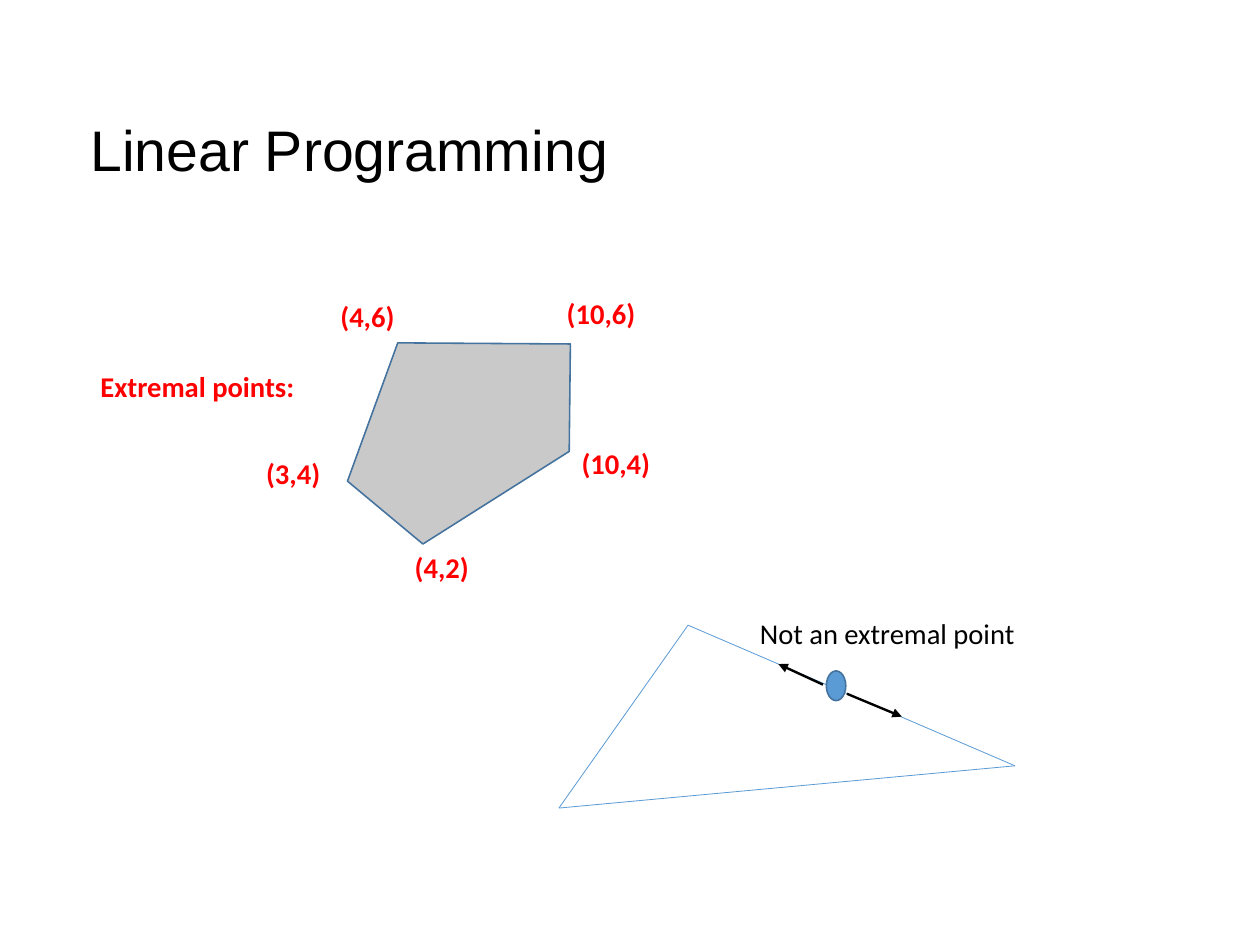
"""Build the Linear Programming slide on extremal points."""
import pptx
import pptx.dml.color
import pptx.enum.shapes
import pptx.enum.text
import pptx.oxml.ns
import pptx.util
from lxml import etree

Inches = pptx.util.Inches
Pt = pptx.util.Pt
HUES = {"ink": "000000", "red": "FF0000", "gray": "C9C9C9",
        "edge": "43739E", "blue": "5B9BD5"}


def tint(name):
    return pptx.dml.color.RGBColor.from_string(HUES[name])


def style(font, face, size, hue, bold=False):
    font.name = face
    font.size = Pt(size)
    font.bold = bold
    font.color.rgb = tint(hue)


def add_title(slide, text):
    title = slide.shapes.title
    title.left, title.top = Inches(0.79), Inches(0.74)
    title.width, title.height = Inches(9.25), Inches(1.12)
    frame = title.text_frame
    frame.text = text
    frame.margin_left = frame.margin_right = 0
    frame.margin_top = frame.margin_bottom = 0
    frame.vertical_anchor = pptx.enum.text.MSO_ANCHOR.MIDDLE
    line = frame.paragraphs[0]
    line.alignment = pptx.enum.text.PP_ALIGN.LEFT
    style(line.font, "Arial", 36, "ink")


def add_label(slide, text, left, top, width, hue="red", bold=True):
    box = slide.shapes.add_textbox(
        Inches(left), Inches(top), Inches(width), Inches(0.4))
    frame = box.text_frame
    frame.word_wrap = False
    frame.auto_size = pptx.enum.text.MSO_AUTO_SIZE.SHAPE_TO_FIT_TEXT
    frame.text = text
    style(frame.paragraphs[0].font, "Calibri", 18, hue, bold)


def paint(shape, fill):
    shape.shadow.inherit = False
    shape.fill.solid()
    shape.fill.fore_color.rgb = tint(fill)
    shape.line.color.rgb = tint("edge")
    shape.line.width = Pt(1)


def add_region(slide, points):
    first, *rest = [(Inches(x), Inches(y)) for x, y in points]
    build = slide.shapes.build_freeform(*first)
    build.add_line_segments(rest, close=True)
    paint(build.convert_to_shape(), "gray")


def add_dot(slide, left, top, width, height):
    dot = slide.shapes.add_shape(
        pptx.enum.shapes.MSO_SHAPE.OVAL,
        Inches(left), Inches(top), Inches(width), Inches(height))
    paint(dot, "blue")


def add_line(slide, start, end, hue, width, arrow=False):
    line = slide.shapes.add_connector(
        pptx.enum.shapes.MSO_CONNECTOR.STRAIGHT,
        *[Inches(v) for v in start + end])
    line.line.color.rgb = tint(hue)
    line.line.width = Pt(width)
    qn = pptx.oxml.ns.qn
    props = line._element.spPr
    if arrow:
        etree.SubElement(props.find(qn("a:ln")), qn("a:tailEnd"),
                         type="triangle")
    etree.SubElement(props, qn("a:effectLst"))


def main():
    deck = pptx.Presentation()
    deck.slide_width, deck.slide_height = Inches(28 / 2.54), Inches(21 / 2.54)
    slide = deck.slides.add_slide(deck.slide_layouts[5])
    add_title(slide, "Linear Programming")

    add_region(slide, [(3.04, 4.21), (3.48, 3), (4.99, 3.01),
                       (4.98, 3.95), (3.7, 4.76)])
    for text, left, top, width in [
            ("(4,2)", 3.53, 4.76, 0.68), ("(10,4)", 4.99, 3.85, 0.81),
            ("(10,6)", 4.86, 2.54, 0.81), ("(4,6)", 2.88, 2.57, 0.68),
            ("(3,4)", 2.23, 3.94, 0.68)]:
        add_label(slide, text, left, top, width)

    peak, base, tip = (6.02, 5.47), (4.89, 7.07), (8.88, 6.7)
    for start, end in [(peak, base), (peak, tip), (tip, base)]:
        add_line(slide, start, end, "blue", 0.5)
    add_dot(slide, 7.23, 5.87, 0.17, 0.26)
    for start, end in [((7.2, 5.99), (6.81, 5.81)),
                       ((7.41, 6.07), (7.89, 6.27))]:
        add_line(slide, start, end, "ink", 1.5, arrow=True)

    add_label(slide, "Not an extremal point", 6.55, 5.34, 2.46, "ink", False)
    add_label(slide, "Extremal points:", 0.78, 3.18, 1.91)
    deck.save("out.pptx")


if __name__ == "__main__":
    main()
